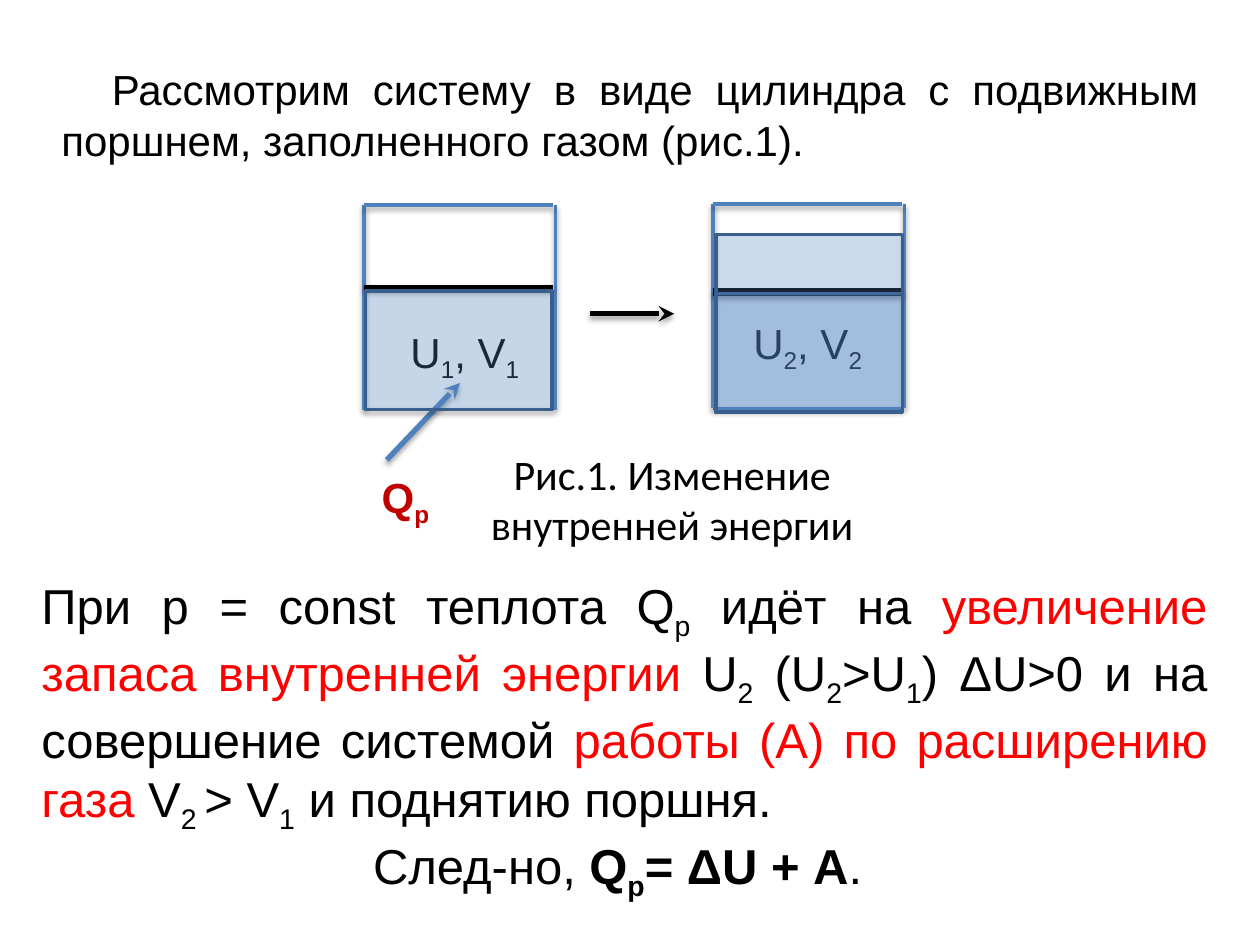
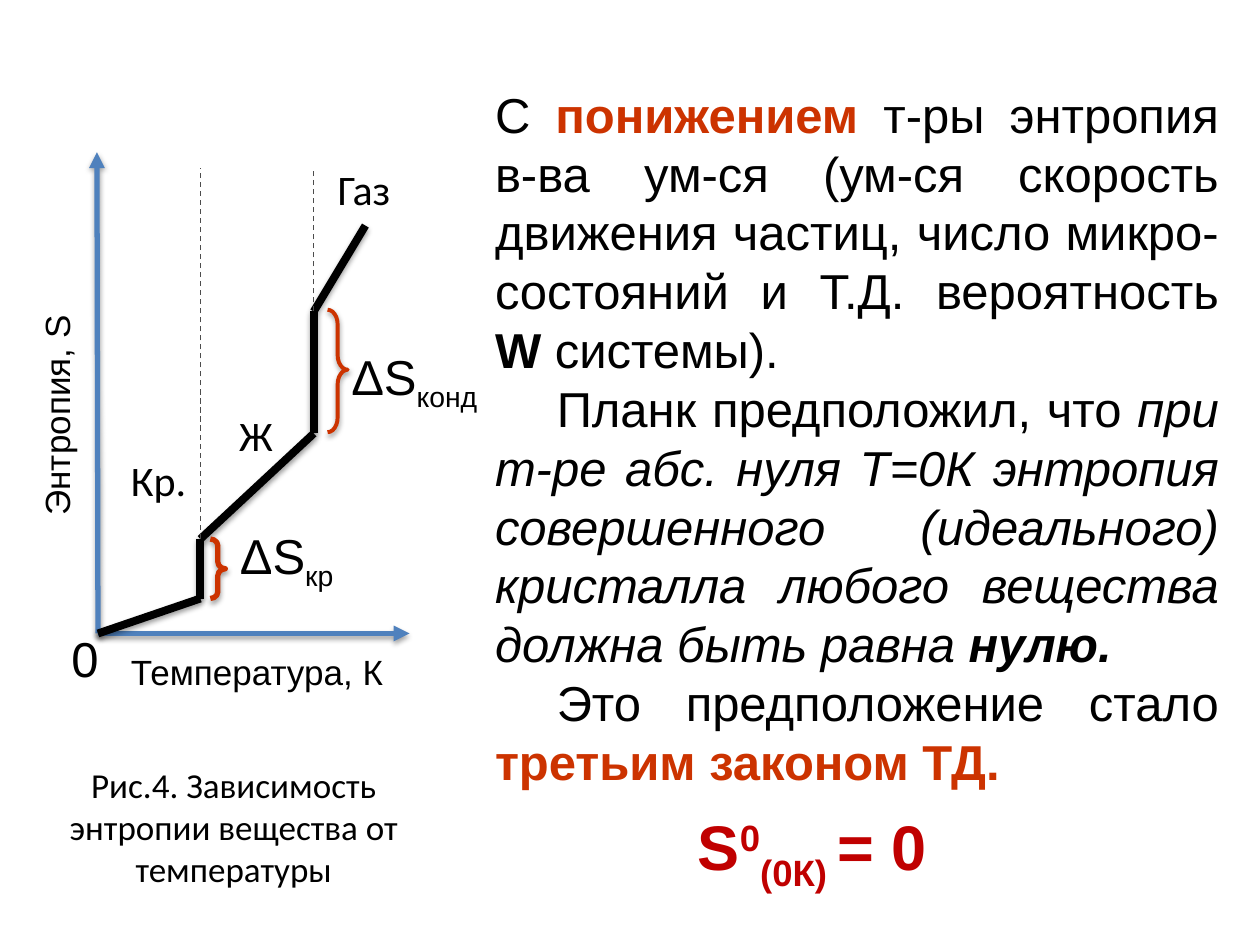
from itertools import pairwise

from lxml.etree import SubElement
from pptx import Presentation
from pptx.dml.color import RGBColor
from pptx.enum.dml import MSO_LINE
from pptx.enum.shapes import MSO_CONNECTOR, MSO_SHAPE
from pptx.enum.text import MSO_ANCHOR, PP_ALIGN
from pptx.oxml.ns import qn
from pptx.util import Pt

BLACK = RGBColor(0x00, 0x00, 0x00)
GREY = RGBColor(0x4C, 0x4C, 0x4C)
BLUE = RGBColor(0x4F, 0x81, 0xBD)
NAVY = RGBColor(0x3A, 0x5F, 0x8C)
RED = RGBColor(0xFF, 0x00, 0x00)
DARK_RED = RGBColor(0xC0, 0x00, 0x00)
RUST = RGBColor(0xCC, 0x33, 0x00)

SUB = {"baseline": -25}
SUPER = {"baseline": 30}
BOLD = {"bold": True}
ITALIC = {"italic": True}
RED_TEXT = {"color": RED}
RUST_TEXT = {"color": RUST, "bold": True}


def add_span(para, text, size=24, font="Arial", color=BLACK, bold=False,
             italic=False, baseline=0):
    span = para.add_run()
    span.text = text
    span.font.size = Pt(size)
    span.font.name = font
    span.font.color.rgb = color
    span.font.bold = bold
    span.font.italic = italic
    if baseline:
        span.font._element.set("baseline", str(baseline * 1000))


def add_text(page, place, paragraphs, align=PP_ALIGN.LEFT, anchor=MSO_ANCHOR.TOP,
             wrap=True, indents=(), vertical=None, **style):
    """Each paragraph is a list of spans: plain strings or (string, format) pairs."""
    box = page.shapes.add_textbox(*map(Pt, place))
    frame = box.text_frame
    frame.word_wrap = wrap
    frame.vertical_anchor = anchor
    if vertical:
        box.element.txBody.bodyPr.set("vert", vertical)
    for number, spans in enumerate(paragraphs):
        para = frame.add_paragraph() if number else frame.paragraphs[0]
        para.alignment = align[number] if isinstance(align, list) else align
        if number < len(indents):
            para._p.get_or_add_pPr().set("indent", str(Pt(indents[number])))
        for span in spans:
            text, extra = (span, {}) if isinstance(span, str) else span
            add_span(para, text, **(style | extra))
    return box


def set_effects(shape, opacity=0):
    """Give the shape a soft shadow below it, or none when opacity is 0."""
    effects = SubElement(shape.element.spPr, qn("a:effectLst"))
    if opacity:
        shadow = SubElement(effects, qn("a:outerShdw"), blurRad=str(Pt(3.1)),
                            dist=str(Pt(1.8)), dir="5400000", rotWithShape="0")
        color = SubElement(shadow, qn("a:srgbClr"), val=str(BLACK))
        SubElement(color, qn("a:alpha"), val=str(opacity * 1000))


def add_line(page, start, end, color=BLACK, width=3.0, head=None, dash=None, shadow=36):
    line = page.shapes.add_connector(MSO_CONNECTOR.STRAIGHT, *map(Pt, (*start, *end)))
    line.line.color.rgb = color
    line.line.width = Pt(width)
    if dash:
        line.line.dash_style = dash
    if head:
        SubElement(line.line._get_or_add_ln(), qn("a:tailEnd"), type=head)
    set_effects(line, shadow)


def add_gas(page, place, opacity):
    gas = page.shapes.add_shape(MSO_SHAPE.RECTANGLE, *map(Pt, place))
    gas.shadow.inherit = False
    gas.fill.solid()
    gas.fill.fore_color.rgb = BLUE
    color = gas.fill._xPr.find(".//" + qn("a:srgbClr"))
    SubElement(color, qn("a:alpha"), val=str(opacity * 1000))
    gas.line.color.rgb = NAVY
    gas.line.width = Pt(2)


def add_cylinder(page, left, top, piston, piston_width, label_place, state):
    right, wall, bottom = left + 108, left + 109.4, top + 116.8
    for start, end in (((left, bottom), (right, bottom)), ((left, top), (left, bottom)),
                       ((wall, bottom), (wall, top)), ((left, top), (right, top))):
        add_line(page, start, end, BLUE, 2)
    add_line(page, (left, piston), (right, piston), width=piston_width)
    add_text(page, (*label_place, 83.5, 41),
             [["U", (state, SUB), ", V", (state, SUB)]])


def add_brace(page, place, adjustments, width):
    brace = page.shapes.add_shape(MSO_SHAPE.RIGHT_BRACE, *map(Pt, place))
    for number, value in enumerate(adjustments):
        brace.adjustments[number] = value
    brace.fill.background()
    brace.line.color.rgb = RUST
    brace.line.width = Pt(width)
    set_effects(brace, 38)


def build_energy_page(page):
    add_text(page, (28, 33, 664, 65.5),
             [["Рассмотрим систему в виде цилиндра с подвижным поршнем, "
               "заполненного газом (рис.1)."]],
             align=PP_ALIGN.JUSTIFY, indents=[28.8])
    add_text(page, (265, 252.7, 238.3, 73.4),
             [["Рис.1. Изменение"], ["внутренней энергии"]],
             align=PP_ALIGN.CENTER, font="Calibri")
    add_line(page, (221, 262.8), (262.8, 218.9), BLUE, head="stealth")
    add_text(page, (211, 265.7, 67.7, 44), [["Q", ("p", SUB)]],
             color=DARK_RED, bold=True)
    add_line(page, (337, 179.3), (385.2, 179.3), head="stealth")

    add_cylinder(page, 208, 117.2, 164.2, 3, (227.5, 182.9), "1")
    add_gas(page, (208.8, 166.3, 106.6, 67.7), 32)
    add_cylinder(page, 407.5, 116.6, 167, 4.5, (423.4, 177.8), "2")
    add_gas(page, (409, 167.8, 106.6, 67.7), 32)
    add_gas(page, (409, 134, 106.6, 101.5), 29)

    add_text(page, (16.6, 325.4, 680.4, 177),
             [["При р = const теплота Q", ("p", SUB), " идёт на ",
               ("увеличение запаса внутренней энергии ", RED_TEXT),
               "U", ("2", SUB), " (U", ("2", SUB), ">U", ("1", SUB),
               ") ΔU>0 и на совершение системой ",
               ("работы (А) по расширению газа ", RED_TEXT),
               "V", ("2 ", SUB), "> V", ("1", SUB), " и поднятию поршня."],
              ["След-но, ", ("Q", BOLD), ("р", BOLD | SUB), ("= ΔU + А", BOLD), ". "]],
             align=[PP_ALIGN.JUSTIFY, PP_ALIGN.CENTER], size=28)


def build_entropy_chart(page):
    origin = (56, 362)
    melting, boiling = 114.5, 179.3
    curve = [origin, (melting, 342), (melting, 308), (boiling, 247.7),
             (boiling, 178), (208.8, 128.9)]
    for tip in ((55.4, 87), (234, 362)):
        add_line(page, origin, tip, BLUE, head="triangle")
    for start, end in pairwise(curve):
        add_line(page, start, end, width=4.5, shadow=38)
    for start in (curve[2], curve[4]):
        add_line(page, start, (start[0], 95.8), GREY, 0.75, dash=MSO_LINE.DASH, shadow=0)
    add_brace(page, (120.2, 308, 8.6, 34), (0.45, 0.5), 3)
    add_brace(page, (187.2, 177, 11.5, 70), (0.73, 0.49), 2.25)

    add_text(page, (16.6, 135.4, 28.8, 166.3), [["Энтропия, S"]],
             size=20, vertical="vert270")
    add_text(page, (67.7, 368, 167, 42.5), [["Температура, К"]], size=20)
    add_text(page, (33.8, 355.7, 33.8, 41), [["0"]], size=28)
    for name, left, top in (("Газ", 185.8, 90), ("Ж", 129.6, 230.4), ("Кр.", 67.7, 256.3)):
        add_text(page, (left, top, 50, 36.7), [[name]], wrap=False, font="Calibri")
    add_text(page, (119.5, 292.3, 88.6, 54), [["ΔS", ("кр", SUB)]],
             align=PP_ALIGN.CENTER, anchor=MSO_ANCHOR.MIDDLE, size=28)
    add_text(page, (193.7, 194.4, 93.6, 45.4), [["ΔS", ("конд", SUB)]], size=28)
    add_text(page, (16.6, 432.7, 234, 85),
             [["Рис.4. Зависимость энтропии вещества от температуры"]],
             align=PP_ALIGN.CENTER, size=20, font="Calibri")


def build_entropy_page(page):
    build_entropy_chart(page)
    add_text(page, (275.8, 42.5, 427.7, 414.7),
             [["С ", ("понижением ", RUST_TEXT),
               "т-ры энтропия в-ва ум-ся (ум-ся скорость движения частиц, "
               "число микро-состояний и Т.Д. вероятность ", ("W ", BOLD), "системы)."],
              ["Планк предположил, что ",
               ("при т-ре абс. нуля Т=0К энтропия совершенного (идеального) "
                "кристалла любого вещества должна быть равна ", ITALIC),
               ("нулю.", BOLD | ITALIC)],
              ["Это предположение стало ", ("третьим законом ТД.", RUST_TEXT)]],
             align=PP_ALIGN.JUSTIFY, anchor=MSO_ANCHOR.MIDDLE,
             indents=[0, 35.3, 35.3], size=28)
    add_text(page, (391.7, 458, 154.8, 51),
             [["S", ("0", SUPER), ("(0К) ", SUB), "= 0"]],
             wrap=False, size=36, color=DARK_RED, bold=True)


def main():
    deck = Presentation()
    deck.slide_width, deck.slide_height = Pt(720), Pt(540)
    blank = deck.slide_layouts[6]
    for build in (build_energy_page, build_entropy_page):
        build(deck.slides.add_slide(blank))
    deck.save("out.pptx")


if __name__ == "__main__":
    main()
